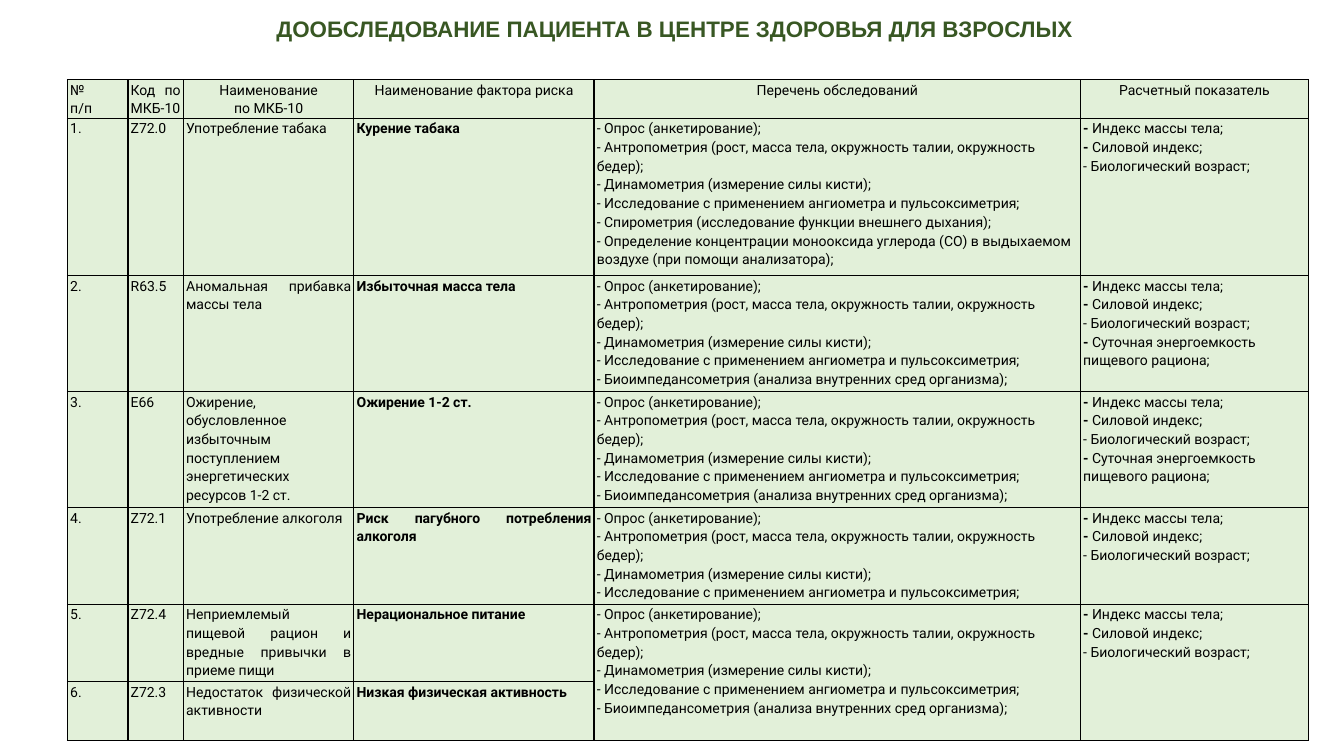
"""Builds the slide on follow-up examination of patients in an adult health centre."""
from dataclasses import dataclass

from lxml.etree import SubElement
from pptx import Presentation
from pptx.dml.color import RGBColor
from pptx.enum.text import MSO_ANCHOR, MSO_AUTO_SIZE, PP_ALIGN
from pptx.oxml.ns import qn
from pptx.util import Pt


@dataclass(frozen=True)
class Theme:
    heading: str = "385723"
    ink: str = "000000"
    cell: str = "E2F0D9"
    heading_font: str = "Arial"
    body_font: str = "Roboto"
    heading_size: int = 16
    body_size: int = 10
    border: int = 1
    line_spacing: float = 1.15


class SlideBuilder:
    def __init__(self, slide, theme):
        self.slide = slide
        self.theme = theme

    def style_run(self, run, font, size, colour, bold=False):
        run.font.name = font
        run.font.size = Pt(size)
        run.font.bold = bold
        run.font.color.rgb = RGBColor.from_string(colour)

    def title(self, text, left, top, width, height):
        heading = self.slide.shapes.title
        heading.left, heading.top = Pt(left), Pt(top)
        heading.width, heading.height = Pt(width), Pt(height)
        frame = heading.text_frame
        frame.text = text
        frame.word_wrap = True
        frame.auto_size = MSO_AUTO_SIZE.SHAPE_TO_FIT_TEXT
        frame.vertical_anchor = MSO_ANCHOR.TOP
        paragraph = frame.paragraphs[0]
        paragraph.alignment = PP_ALIGN.CENTER
        self.style_run(paragraph.runs[0], self.theme.heading_font,
                       self.theme.heading_size, self.theme.heading, True)

    def table(self, left, top, widths, heights):
        grid = self.slide.shapes.add_table(
            len(heights), len(widths), Pt(left), Pt(top),
            Pt(sum(widths)), Pt(sum(heights))).table
        grid.first_row = grid.horz_banding = False
        for column, width in zip(grid.columns, widths):
            column.width = Pt(width)
        for row, height in zip(grid.rows, heights):
            row.height = Pt(height)
        for cell in grid.iter_cells():
            self.frame_cell(cell)
        return grid

    def frame_cell(self, cell):
        cell.margin_left = cell.margin_right = Pt(2)
        cell.margin_top = cell.margin_bottom = Pt(0)
        properties = cell._tc.get_or_add_tcPr()
        for side in ("a:lnL", "a:lnR", "a:lnT", "a:lnB"):
            line = SubElement(properties, qn(side), w=str(Pt(self.theme.border)))
            SubElement(SubElement(line, qn("a:solidFill")), qn("a:srgbClr"),
                       val=self.theme.ink)
        cell.fill.solid()
        cell.fill.fore_color.rgb = RGBColor.from_string(self.theme.cell)

    def fill_cell(self, cell, lines, alignment, bold=False, space_after=0):
        cell.text_frame.text = "\n".join(
            line if isinstance(line, str) else line[0] for line in lines)
        for paragraph, line in zip(cell.text_frame.paragraphs, lines):
            paragraph.alignment = alignment
            paragraph.line_spacing = self.theme.line_spacing
            paragraph.space_after = Pt(space_after)
            if not isinstance(line, str):
                paragraph.add_run().text = line[1]
            for index, run in enumerate(paragraph.runs):
                emphasis = bold if isinstance(line, str) else index == 0
                self.style_run(run, self.theme.body_font, self.theme.body_size,
                               self.theme.ink, emphasis)


HEADERS = [
    (["№", "п/п"], PP_ALIGN.JUSTIFY),
    (["Код по МКБ-10"], PP_ALIGN.JUSTIFY),
    (["Наименование", "по МКБ-10"], PP_ALIGN.CENTER),
    (["Наименование фактора риска"], PP_ALIGN.CENTER),
    (["Перечень обследований"], PP_ALIGN.CENTER),
    (["Расчетный показатель"], PP_ALIGN.CENTER),
]

BASIC_EXAMS = [
    "- Опрос (анкетирование);",
    "- Антропометрия (рост, масса тела, окружность талии, окружность бедер);",
    "- Динамометрия (измерение силы кисти);",
    "- Исследование с применением ангиометра и пульсоксиметрия;",
]
SMOKING_EXAMS = BASIC_EXAMS + [
    "- Спирометрия (исследование функции внешнего дыхания);",
    "- Определение концентрации монооксида углерода (СО) в выдыхаемом воздухе "
    "(при помощи анализатора);",
]
BODY_EXAMS = BASIC_EXAMS + ["- Биоимпедансометрия (анализа внутренних сред организма);"]

BASIC_INDICES = [
    ("-", " Индекс массы тела;"),
    ("-", " Силовой индекс;"),
    "- Биологический возраст;",
]
WEIGHT_INDICES = BASIC_INDICES + [("- ", "Cуточная энергоемкость пищевого рациона;")]

RISKS = [
    ("Z72.0", "Употребление табака", "Курение табака", SMOKING_EXAMS, BASIC_INDICES),
    ("R63.5", "Аномальная прибавка массы тела", "Избыточная масса тела",
     BODY_EXAMS, WEIGHT_INDICES),
    ("E66", "Ожирение, обусловленное избыточным поступлением энергетических "
     "ресурсов 1-2 ст.", "Ожирение 1-2 ст.", BODY_EXAMS, WEIGHT_INDICES),
    ("Z72.1", "Употребление алкоголя", "Риск пагубного потребления алкоголя",
     BASIC_EXAMS, BASIC_INDICES),
    ("Z72.4", "Неприемлемый пищевой рацион и вредные привычки в приеме пищи",
     "Нерациональное питание", BODY_EXAMS, BASIC_INDICES),
    ("Z72.3", "Недостаток физической активности", "Низкая физическая активность",
     None, None),
]

COLUMN_WIDTHS = [43.2, 39.6, 121.8, 171.6, 347.4, 162.8]
ROW_HEIGHTS = [23.8, 112.4, 77, 77, 59, 35.2, 41.8]


def main():
    presentation = Presentation()
    presentation.slide_width, presentation.slide_height = Pt(960), Pt(540)
    slide = presentation.slides.add_slide(presentation.slide_layouts[5])
    builder = SlideBuilder(slide, Theme())
    builder.title("ДООБСЛЕДОВАНИЕ ПАЦИЕНТА В ЦЕНТРЕ ЗДОРОВЬЯ ДЛЯ ВЗРОСЛЫХ",
                  177, 7.2, 610, 26.6)

    risks = builder.table(48.2, 56.9, COLUMN_WIDTHS, ROW_HEIGHTS)
    for column in (4, 5):
        risks.cell(5, column).merge(risks.cell(6, column))
    for column, (lines, alignment) in enumerate(HEADERS):
        builder.fill_cell(risks.cell(0, column), lines, alignment)
    for row, (code, disease, factor, exams, indices) in enumerate(RISKS, 1):
        builder.fill_cell(risks.cell(row, 0), [f"{row}."], PP_ALIGN.JUSTIFY)
        builder.fill_cell(risks.cell(row, 1), [code], PP_ALIGN.JUSTIFY)
        builder.fill_cell(risks.cell(row, 2), [disease], PP_ALIGN.JUSTIFY, space_after=15)
        builder.fill_cell(risks.cell(row, 3), [factor], PP_ALIGN.JUSTIFY, bold=True)
        if exams:
            builder.fill_cell(risks.cell(row, 4), exams, PP_ALIGN.LEFT)
            builder.fill_cell(risks.cell(row, 5), indices, PP_ALIGN.LEFT)

    presentation.save("out.pptx")


if __name__ == "__main__":
    main()
